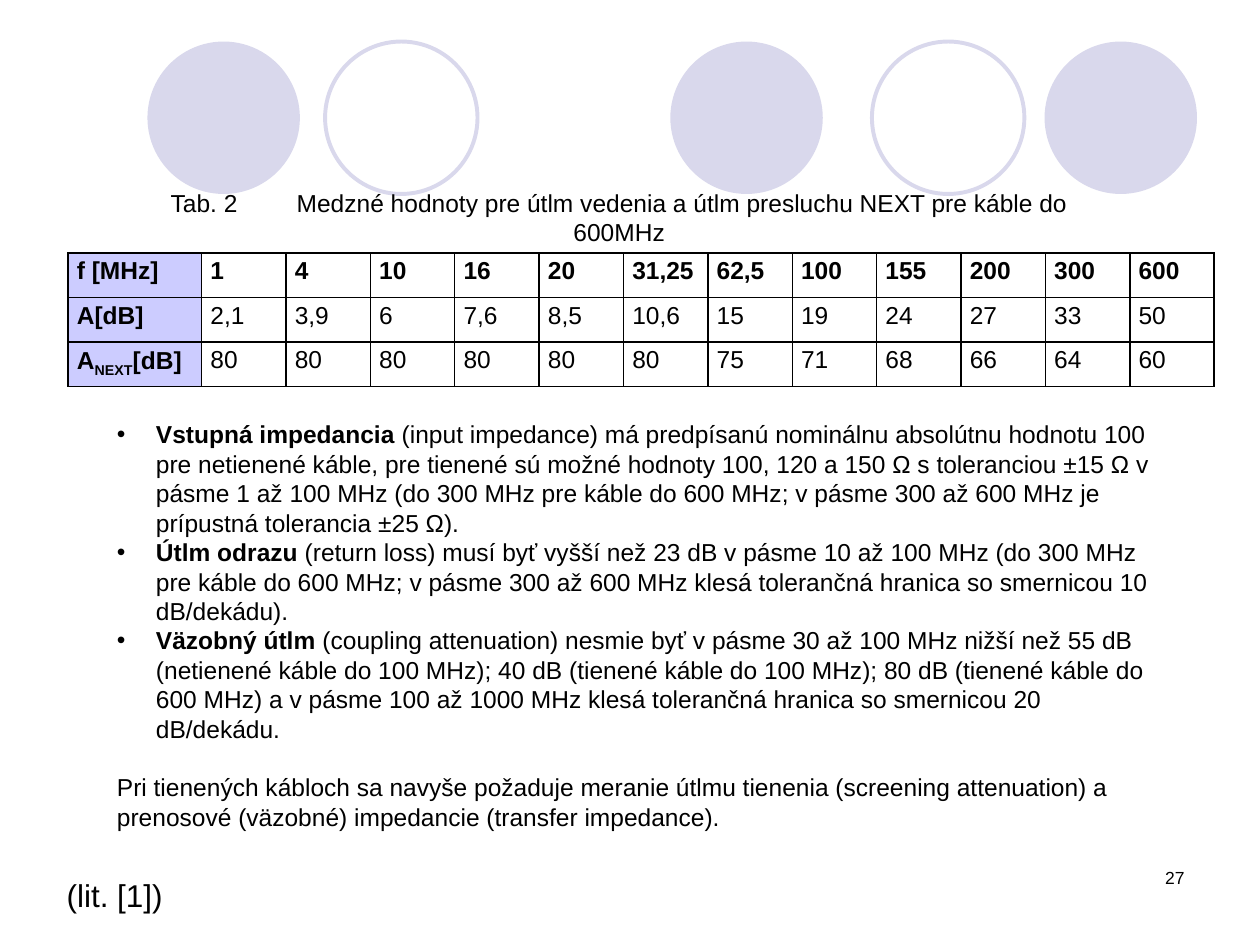
"""Build the slide on cable attenuation limits and impedance requirements."""
from lxml import etree
from pptx import Presentation
from pptx.dml.color import RGBColor
from pptx.enum import shapes, text
from pptx.oxml import ns
from pptx.util import Inches, Pt

BLACK = RGBColor(0x00, 0x00, 0x00)
LAVENDER = RGBColor(0xD9, 0xD8, 0xEC)
HEADER = RGBColor(0xCC, 0xCC, 0xFF)


def add_run(paragraph, words, **formats):
    run = paragraph.add_run()
    run.text = words
    run.font.color.rgb = BLACK
    for name, value in {"name": "Arial", "size": Pt(14), "bold": False, **formats}.items():
        setattr(run.font, name, value)
    return run


def add_box(left, top, width, height):
    frame = slide.shapes.add_textbox(
        Inches(left), Inches(top), Inches(width), Inches(height)).text_frame
    frame.word_wrap = True
    return frame


prs = Presentation()
prs.slide_width, prs.slide_height = Inches(10), Inches(7.5)
slide = prs.slides.add_slide(prs.slide_layouts[6])

for left, filled in [(5.32, True), (8.29, True), (1.17, True), (6.92, False), (2.58, False)]:
    circle = slide.shapes.add_shape(
        shapes.MSO_SHAPE.OVAL, Inches(left), Inches(0.33), Inches(1.21), Inches(1.21))
    circle.shadow.inherit = False
    if filled:
        circle.fill.solid()
        circle.fill.fore_color.rgb = LAVENDER
        circle.line.fill.background()
    else:
        circle.fill.background()
        circle.line.color.rgb = LAVENDER
        circle.line.width = Pt(2.25)

page_number = add_box(7.17, 6.83, 2.33, 0.5).paragraphs[0]
page_number.alignment = text.PP_ALIGN.RIGHT
add_run(page_number, "27", size=Pt(10))

citation = add_box(0.43, 6.9, 2.52, 0.4).paragraphs[0]
add_run(citation, "(lit. [1])", size=Pt(18))

requirements = [
    ("Vstupná impedancia ",
     "(input impedance) má predpísanú nominálnu absolútnu hodnotu 100 pre netienené káble, "
     "pre tienené sú možné hodnoty 100, 120 a 150 Ω s toleranciou ±15 Ω v pásme 1 až 100 MHz "
     "(do 300 MHz pre káble do 600 MHz; v pásme 300 až 600 MHz je prípustná tolerancia ±25 Ω)."),
    ("Útlm odrazu ",
     "(return loss) musí byť vyšší než 23 dB v pásme 10 až 100 MHz (do 300 MHz pre káble do "
     "600 MHz; v pásme 300 až 600 MHz klesá tolerančná hranica so smernicou 10 dB/dekádu)."),
    ("Väzobný útlm ",
     "(coupling attenuation) nesmie byť v pásme 30 až 100 MHz nižší než 55 dB (netienené káble "
     "do 100 MHz); 40 dB (tienené káble do 100 MHz); 80 dB (tienené káble do 600 MHz) a v pásme "
     "100 až 1000 MHz klesá tolerančná hranica so smernicou 20 dB/dekádu."),
]
body = add_box(0.83, 3.28, 8.5, 3.4)
for index, (term, explanation) in enumerate(requirements):
    item = body.add_paragraph() if index else body.paragraphs[0]
    add_run(item, term, bold=True)
    add_run(item, explanation)
    properties = item._p.get_or_add_pPr()
    properties.set("marL", str(Inches(0.31)))
    properties.set("indent", str(-Inches(0.31)))
    etree.SubElement(properties, ns.qn("a:buFont"), typeface="Arial")
    etree.SubElement(properties, ns.qn("a:buChar"), char="•")
closing = body.add_paragraph()
closing.space_before = Pt(16.8)
add_run(closing, "Pri tienených kábloch sa navyše požaduje meranie útlmu tienenia "
                 "(screening attenuation) a prenosové (väzobné) impedancie (transfer impedance).")

limits = [
    "f [MHz]|1|4|10|16|20|31,25|62,5|100|155|200|300|600".split("|"),
    "A[dB]|2,1|3,9|6|7,6|8,5|10,6|15|19|24|27|33|50".split("|"),
    "A NEXT [dB]|80|80|80|80|80|80|75|71|68|66|64|60".split("|"),
]
table = slide.shapes.add_table(
    3, 13, Inches(0.54), Inches(2.01), Inches(9.1), Inches(1.06)).table
for index, column in enumerate(table.columns):
    column.width = Inches(0.67 if index else 1.06)
for row_index, values in enumerate(limits):
    table.rows[row_index].height = Inches(1.06 / 3)
    for column_index, value in enumerate(values):
        cell = table.cell(row_index, column_index)
        for name, inset in {"margin_left": 0.07, "margin_right": 0.07,
                            "margin_top": 0, "margin_bottom": 0}.items():
            setattr(cell, name, Inches(inset))
        entry = cell.text_frame.paragraphs[0]
        entry.alignment = text.PP_ALIGN.LEFT
        entry.line_spacing = 1.15
        parts = value.split(" ") if value.startswith("A ") else [value]
        for part in parts:
            run = add_run(entry, part, bold=row_index == 0 or column_index == 0)
            if part == "NEXT":
                run.font._element.set("baseline", "-25000")
        cell_properties = cell._tc.get_or_add_tcPr()
        for side in ("a:lnL", "a:lnR", "a:lnT", "a:lnB"):
            border = etree.SubElement(cell_properties, ns.qn(side), w=str(Pt(1)))
            paint = etree.SubElement(border, ns.qn("a:solidFill"))
            etree.SubElement(paint, ns.qn("a:srgbClr"), val=str(BLACK))
        if column_index == 0:
            cell.fill.solid()
            cell.fill.fore_color.rgb = HEADER
        else:
            cell.fill.background()

caption = add_box(0.98, 1.44, 7.87, 0.57).paragraphs[0]
caption.alignment = text.PP_ALIGN.CENTER
add_run(caption, "Tab. 2\tMedzné hodnoty pre útlm vedenia a útlm presluchu NEXT "
                 "pre káble do 600MHz")

prs.save("out.pptx")
